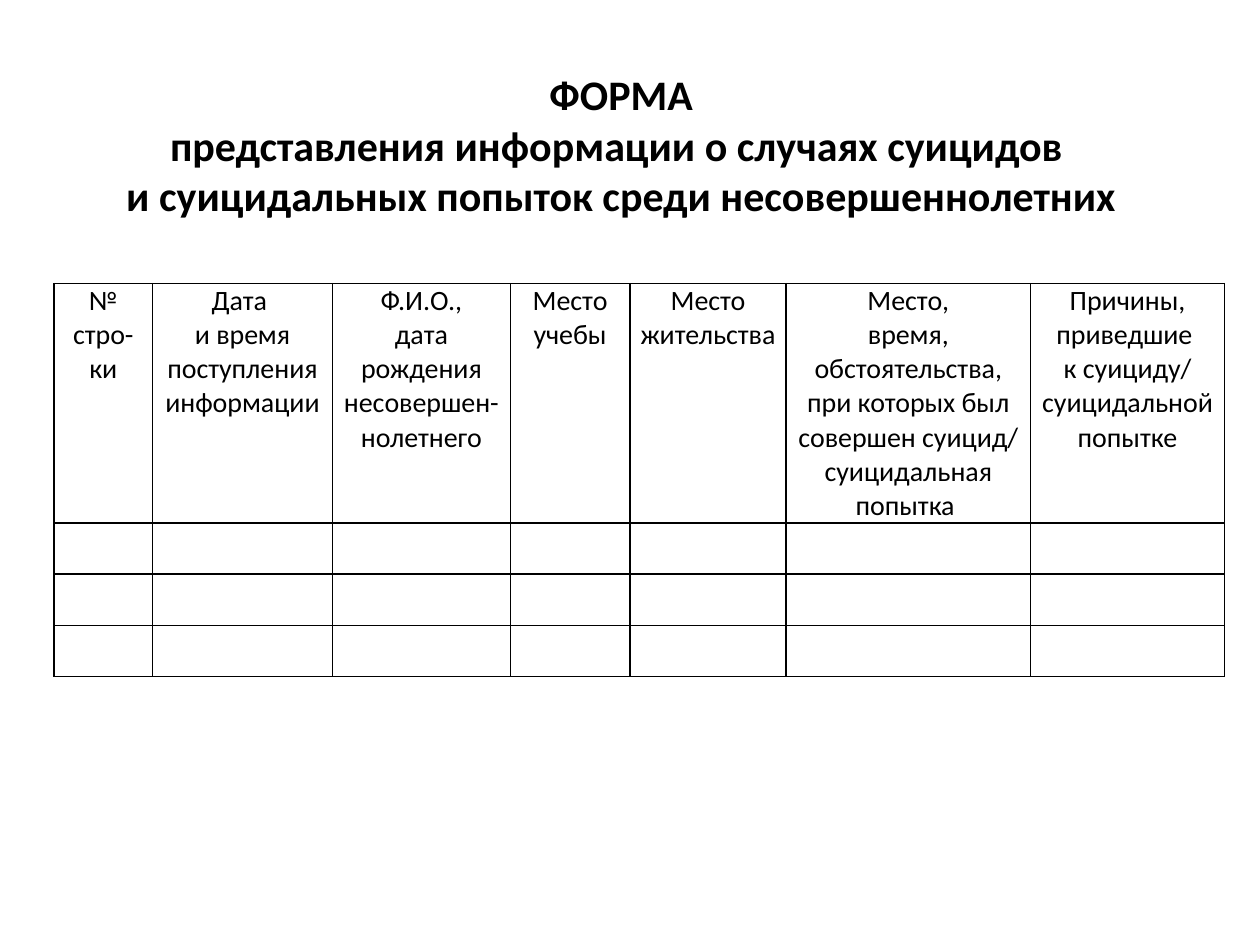
from lxml.etree import SubElement
from pptx import Presentation
from pptx.dml.color import RGBColor
from pptx.enum.text import MSO_ANCHOR, MSO_AUTO_SIZE, PP_ALIGN
from pptx.oxml.ns import qn
from pptx.util import Inches, Pt

BLACK = RGBColor(0x00, 0x00, 0x00)
FONT = "Calibri"
LEFT = Inches(0.43)

# "\v" is a line break, "\n" starts a new paragraph.
TITLE = ("ФОРМА\vпредставления информации о случаях суицидов \v"
         "и суицидальных попыток среди несовершеннолетних")
COLUMNS = [
    ("№ стро-ки", 0.78),
    ("Дата \vи время поступления информации", 1.43),
    ("Ф.И.О.,\nдата рождения несовершен-нолетнего", 1.41),
    ("Место учебы", 0.95),
    ("Место жительства", 1.24),
    ("Место,\nвремя, обстоятельства, при которых был совершен суицид/ "
     "суицидальная попытка ", 1.94),
    ("Причины, приведшие \vк суициду/ суицидальной попытке", 1.54),
]
HEADER_HEIGHT = 1.81
ENTRY_HEIGHT = 0.4
ENTRY_ROWS = 3


def format_text(frame, size, bold):
    for paragraph in frame.paragraphs:
        paragraph.alignment = PP_ALIGN.CENTER
        for run in paragraph.runs:
            run.font.name = FONT
            run.font.size = Pt(size)
            run.font.bold = bold
            run.font.color.rgb = BLACK


def add_title(slide):
    title = slide.shapes.title
    title.left, title.top = LEFT, Inches(0.52)
    title.width, title.height = Inches(9), Inches(1.25)
    frame = title.text_frame
    frame.text = TITLE
    frame.word_wrap = True
    frame.auto_size = MSO_AUTO_SIZE.NONE
    frame.vertical_anchor = MSO_ANCHOR.MIDDLE
    format_text(frame, 24, True)


def outline_cell(cell):
    """Clear the cell's fill and draw a thin border on its four sides."""
    cell.fill.background()
    properties = cell._tc.get_or_add_tcPr()
    for index, side in enumerate(("a:lnL", "a:lnR", "a:lnT", "a:lnB")):
        line = SubElement(properties, qn(side), w=str(Pt(1)))
        fill = SubElement(line, qn("a:solidFill"))
        SubElement(fill, qn("a:srgbClr"), val=str(BLACK))
        properties.insert(index, line)  # borders come before the fill


def add_form(slide):
    heights = [HEADER_HEIGHT] + [ENTRY_HEIGHT] * ENTRY_ROWS
    width = sum(column_width for _, column_width in COLUMNS)
    form = slide.shapes.add_table(
        len(heights), len(COLUMNS), LEFT, Inches(2.25),
        Inches(width), Inches(sum(heights))).table
    form.first_row = form.horz_banding = False
    for row, height in zip(form.rows, heights):
        row.height = Inches(height)
    for index, (heading, column_width) in enumerate(COLUMNS):
        form.columns[index].width = Inches(column_width)
        header = form.cell(0, index)
        header.text_frame.text = heading
        header.margin_left = header.margin_right = Inches(0.07)
        header.margin_top = header.margin_bottom = 0
        format_text(header.text_frame, 16, False)
    for cell in form.iter_cells():
        outline_cell(cell)


def main():
    presentation = Presentation()
    presentation.slide_width = Inches(10)
    presentation.slide_height = Inches(7.5)
    slide = presentation.slides.add_slide(presentation.slide_layouts[5])
    add_title(slide)
    add_form(slide)
    presentation.save("out.pptx")


if __name__ == "__main__":
    main()
